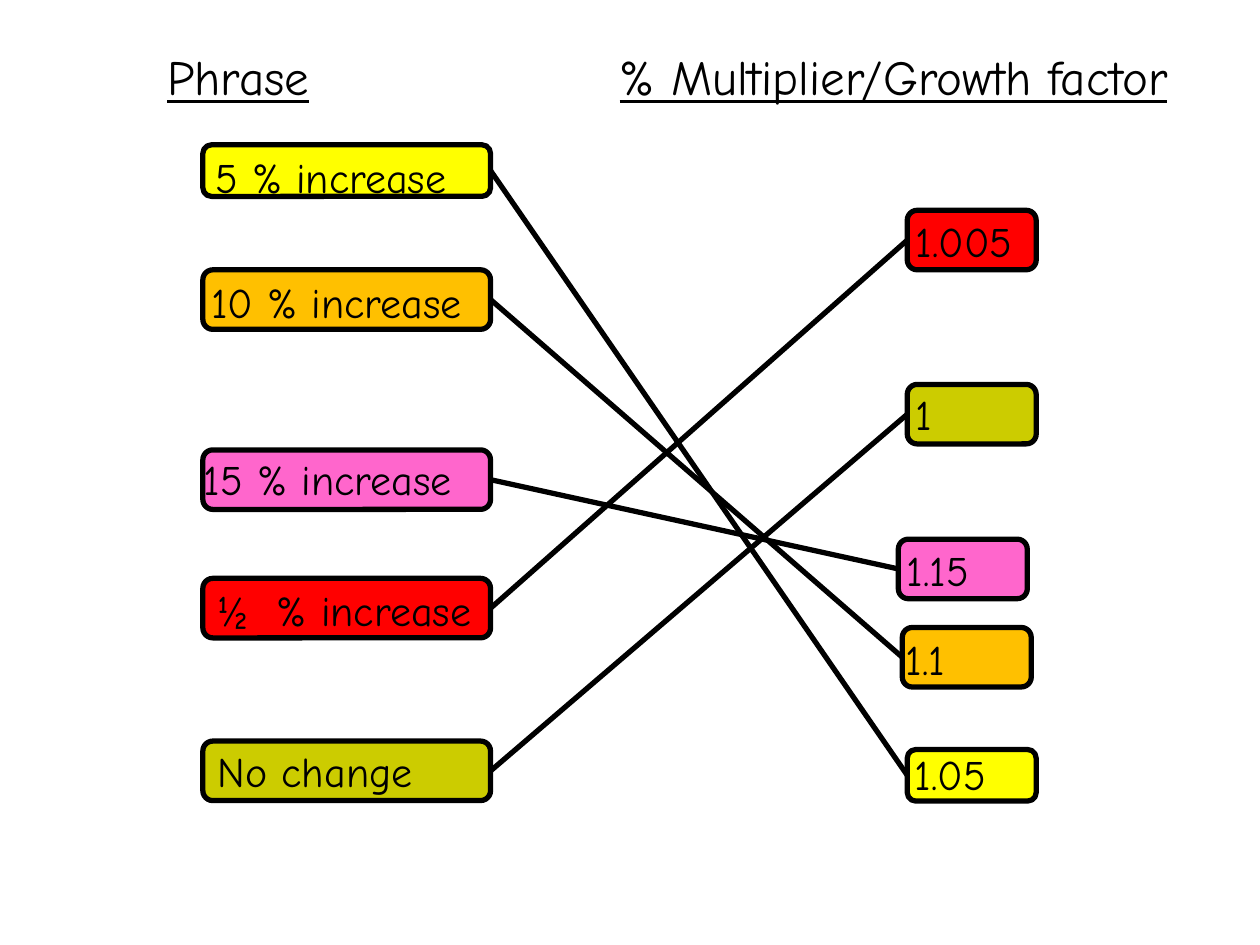
from dataclasses import dataclass

from lxml.etree import SubElement
from pptx import Presentation
from pptx.dml.color import RGBColor
from pptx.enum.shapes import MSO_CONNECTOR as Connector, MSO_SHAPE as Shape
from pptx.enum.text import MSO_ANCHOR as Anchor, MSO_AUTO_SIZE as AutoSize
from pptx.oxml.ns import qn
from pptx.util import Cm, Pt


@dataclass(frozen=True)
class Theme:
    font: str = "Comic Neue"
    ink: str = "000000"
    yellow: str = "FFFF00"
    orange: str = "FFC000"
    pink: str = "FF66CC"
    red: str = "FF0000"
    olive: str = "CCCC00"
    heading_size: int = 28
    label_size: int = 24
    line_width: int = 3


THEME = Theme()
PHRASE_LEFT, PHRASE_WIDTH = 4.09, 5.8
FACTOR_WIDTH = 2.6
LABEL_WIDTH, LABEL_HEIGHT = 7, 1.3
RIGHT_SIDE, LEFT_SIDE = 3, 1

# colour, box height, phrase, its box top, label position,
# factor, its box position, label position
PAIRS = [
    (THEME.yellow, 1.04, "5 % increase", 2.92, (4.09, 2.92),
     "1.05", (18.29, 15.11), (18.19, 14.96)),
    (THEME.orange, 1.2, "10 % increase", 5.44, (4.01, 5.44),
     "1.1", (18.19, 12.65), (18.01, 12.65)),
    (THEME.pink, 1.2, "15 % increase", 9.07, (3.86, 9.02),
     "1.15", (18.11, 10.87), (18.03, 10.85)),
    (THEME.red, 1.2, "½  % increase", 11.66, (4.14, 11.66),
     "1.005", (18.29, 4.24), (18.21, 4.22)),
    (THEME.olive, 1.2, "No change", 14.94, (4.14, 14.91),
     "1", (18.29, 7.75), (18.21, 7.7)),
]


class SlideBuilder:
    def __init__(self, slide, theme):
        self.slide = slide
        self.theme = theme

    def outline(self, line):
        line.color.rgb = RGBColor.from_string(self.theme.ink)
        line.width = Pt(self.theme.line_width)

    def text_box(self, left, top, width, height, size):
        """Add an empty styled text box and return its paragraph."""
        box = self.slide.shapes.add_textbox(Cm(left), Cm(top), Cm(width), Cm(height))
        frame = box.text_frame
        frame.word_wrap = True
        frame.auto_size = AutoSize.SHAPE_TO_FIT_TEXT
        frame.vertical_anchor = Anchor.TOP
        return frame.paragraphs[0], size

    def style(self, paragraph, size):
        paragraph.font.name = self.theme.font
        paragraph.font.size = Pt(size)
        paragraph.font.color.rgb = RGBColor.from_string(self.theme.ink)

    def headings(self, first, second, second_offset):
        """Put two underlined headings on one line, parted by a tab stop."""
        paragraph, size = self.text_box(3.12, 0.81, 22.33, 1.45, self.theme.heading_size)
        tabs = SubElement(paragraph._p.get_or_add_pPr(), qn("a:tabLst"))
        SubElement(tabs, qn("a:tab"), pos=str(Cm(second_offset)), algn="l")
        self.style(paragraph, size)
        for text in (first, "\t", second):
            run = paragraph.add_run()
            run.text = text
            run.font.underline = text != "\t"

    def label(self, text, left, top):
        paragraph, size = self.text_box(
            left, top, LABEL_WIDTH, LABEL_HEIGHT, self.theme.label_size)
        paragraph.text = text
        self.style(paragraph, size)

    def card(self, left, top, width, height, colour):
        card = self.slide.shapes.add_shape(
            Shape.ROUNDED_RECTANGLE, Cm(left), Cm(top), Cm(width), Cm(height))
        card.shadow.inherit = False
        card.fill.solid()
        card.fill.fore_color.rgb = RGBColor.from_string(colour)
        self.outline(card.line)
        return card

    def link(self, start, end):
        connector = self.slide.shapes.add_connector(Connector.STRAIGHT, 0, 0, 0, 0)
        connector.begin_connect(start, RIGHT_SIDE)
        connector.end_connect(end, LEFT_SIDE)
        self.outline(connector.line)
        SubElement(connector._element.spPr, qn("a:effectLst"))


def main():
    presentation = Presentation()
    presentation.slide_width = Cm(25.4)
    presentation.slide_height = Cm(19.05)
    slide = presentation.slides.add_slide(presentation.slide_layouts[6])
    builder = SlideBuilder(slide, THEME)

    builder.headings("Phrase", "% Multiplier/Growth factor", 9.12)
    for (colour, height, phrase, phrase_top, phrase_label,
         factor, factor_place, factor_label) in PAIRS:
        phrase_card = builder.card(PHRASE_LEFT, phrase_top, PHRASE_WIDTH, height, colour)
        factor_card = builder.card(*factor_place, FACTOR_WIDTH, height, colour)
        builder.link(phrase_card, factor_card)
        builder.label(phrase, *phrase_label)
        builder.label(factor, *factor_label)

    presentation.save("out.pptx")


if __name__ == "__main__":
    main()
